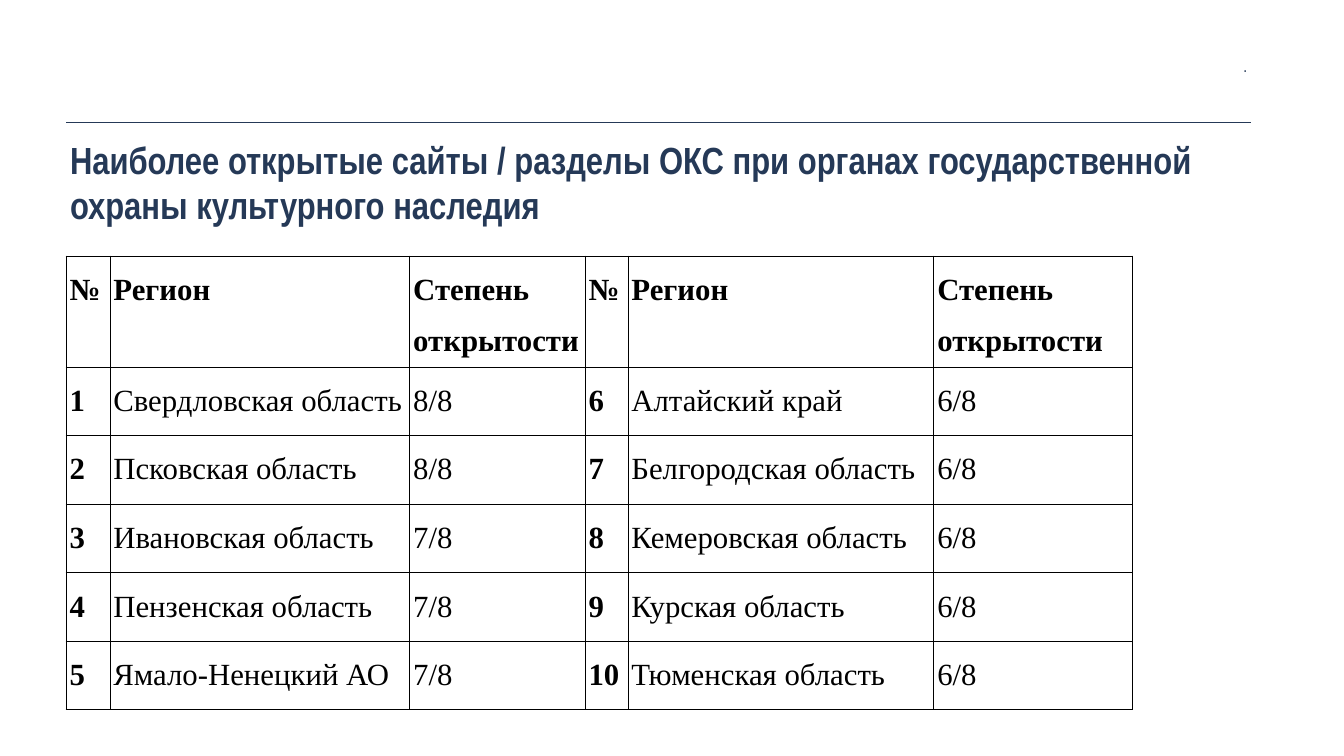
from lxml import etree
from pptx import Presentation
from pptx.dml.color import RGBColor
from pptx.enum.shapes import MSO_CONNECTOR
from pptx.enum.text import MSO_ANCHOR, PP_ALIGN
from pptx.oxml.ns import qn
from pptx.util import Inches, Pt

NAVY = RGBColor(0x25, 0x39, 0x57)
BLACK = RGBColor(0, 0, 0)
LEFT, RIGHT, JUST = PP_ALIGN.LEFT, PP_ALIGN.RIGHT, PP_ALIGN.JUSTIFY
MIDDLE, BOTTOM = MSO_ANCHOR.MIDDLE, MSO_ANCHOR.BOTTOM
STRAIGHT = MSO_CONNECTOR.STRAIGHT


def write(frame, text, size, font="Arial Narrow", color=NAVY, bold=False,
          align=LEFT, after=0, spacing=1.0):
    frame.word_wrap = True
    para = frame.paragraphs[0]
    para.alignment = align
    para.space_after = Pt(after)
    para.line_spacing = spacing
    run = para.add_run()
    run.text = text
    run.font.size = Pt(size)
    run.font.name = font
    run.font.bold = bold
    run.font.color.rgb = color


def add_box(left, top, width, height, anchor):
    box = slide.shapes.add_textbox(Inches(left), Inches(top), Inches(width), Inches(height))
    frame = box.text_frame
    frame.vertical_anchor = anchor
    frame.margin_left = frame.margin_right = Inches(0.08)
    frame.margin_top = frame.margin_bottom = Inches(0.08)
    return frame


prs = Presentation()
prs.slide_width, prs.slide_height = Inches(26.67), Inches(15)
slide = prs.slides.add_slide(prs.slide_layouts[6])

rule = slide.shapes.add_connector(STRAIGHT, Inches(1.31), Inches(2.42), Inches(24.83), Inches(2.42))
rule.line.color.rgb = NAVY
rule.line.width = Pt(1)
etree.SubElement(rule._element.spPr, qn("a:effectLst"))

title = add_box(1.31, 2.62, 24.78, 1.97, BOTTOM)
write(title, "Наиболее открытые сайты / разделы ОКС при органах государственной охраны культурного наследия",
      54, bold=True, after=24)
write(add_box(12.4, 1.03, 12.43, 0.56, MIDDLE), ".", 24, align=RIGHT)

head = ["№", "Регион", "Степень открытости"]
scores = [
    ("Свердловская область", "8/8"),
    ("Псковская область", "8/8"),
    ("Ивановская область", "7/8"),
    ("Пензенская область", "7/8"),
    ("Ямало-Ненецкий АО", "7/8"),
    ("Алтайский край", "6/8"),
    ("Белгородская область", "6/8"),
    ("Кемеровская область", "6/8"),
    ("Курская область", "6/8"),
    ("Тюменская область", "6/8"),
]
ranks = [[str(num), *score] for num, score in enumerate(scores, 1)]
half = len(ranks) // 2
rows = [head * 2] + [a + b for a, b in zip(ranks[:half], ranks[half:])]
widths = [0.87, 5.95, 3.48, 0.85, 6.07, 3.94]

table = slide.shapes.add_table(len(rows), len(widths), Inches(1.31), Inches(5.08),
                               Inches(21.15), Inches(8.89)).table
table.first_row = table.horz_banding = False
for col, width in zip(table.columns, widths):
    col.width = Inches(width)
for r, row in enumerate(rows):
    table.rows[r].height = Inches(1.36)
    for c, text in enumerate(row):
        cell = table.cell(r, c)
        cell.margin_left = cell.margin_right = Inches(0.07)
        cell.margin_top = cell.margin_bottom = 0
        write(cell.text_frame, text, 44, font="Times New Roman", color=BLACK,
              bold=r == 0 or c % 3 == 0, align=JUST, after=8, spacing=1.5)
        props = cell._tc.get_or_add_tcPr()
        for side in ("a:lnL", "a:lnR", "a:lnT", "a:lnB"):
            line = etree.SubElement(props, qn(side), w=str(Pt(1)))
            fill = etree.SubElement(line, qn("a:solidFill"))
            etree.SubElement(fill, qn("a:srgbClr"), val=str(BLACK))
        cell.fill.background()

prs.save("out.pptx")
